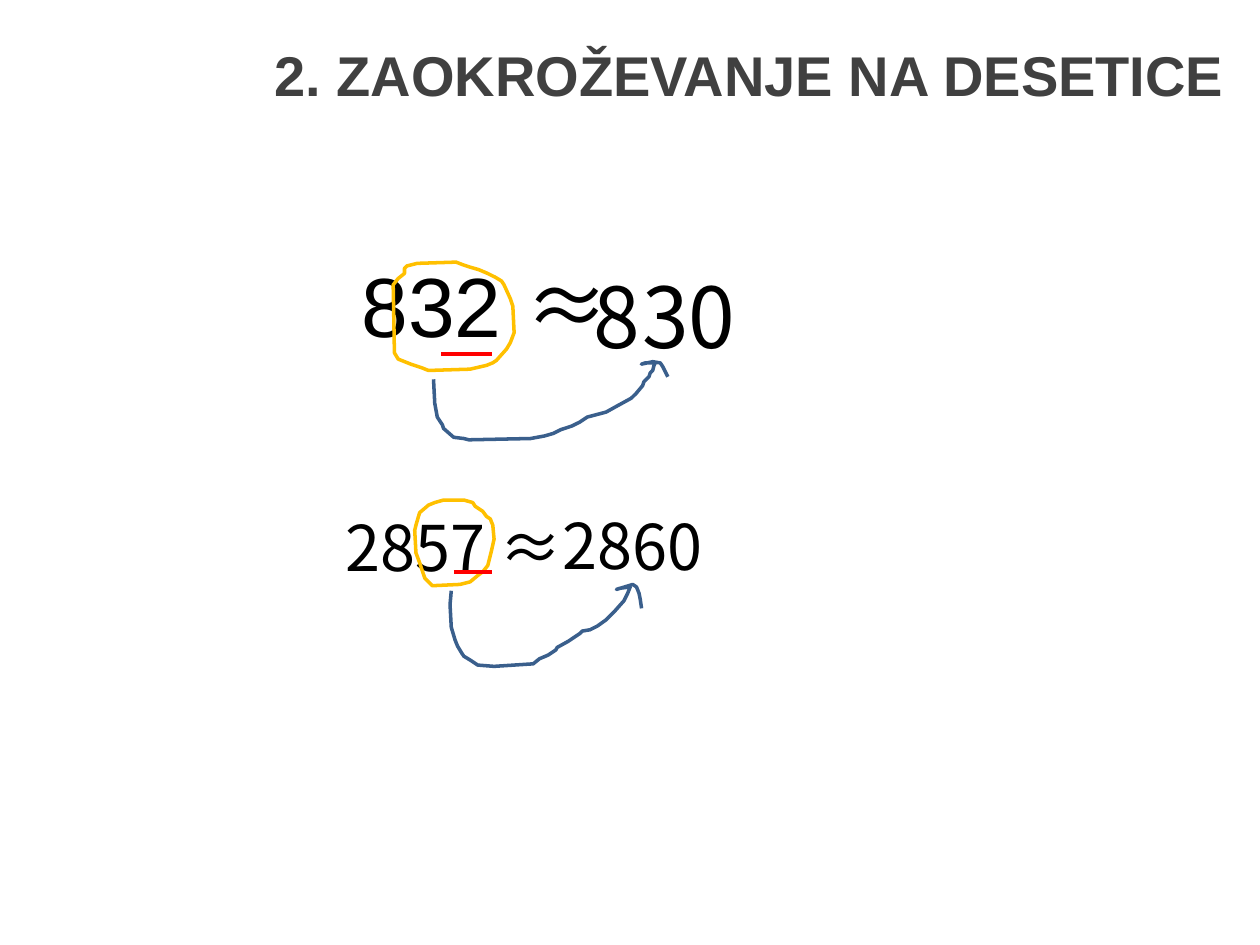
import pptx
import pptx.dml.color
import pptx.enum.shapes
import pptx.enum.text
import pptx.oxml.ns
import pptx.util
from lxml import etree

Cm, Pt = pptx.util.Cm, pptx.util.Pt
RGB = pptx.dml.color.RGBColor

GREY = RGB(0x40, 0x40, 0x40)
BLACK = RGB(0, 0, 0)
AMBER = RGB(0xFF, 0xC0, 0x00)
RED = RGB(0xFF, 0, 0)
BLUE = RGB(0x3A, 0x5F, 0x8C)
LATIN, SYMBOL = "Arial", "Noto Sans CJK KR"
STROKE_UNIT = Cm(2.54) / 100  # pen strokes are in hundredths of an inch

# Pen strokes, relative to the corner of their example
LOOP_832 = [
    (77, 21), (72, 25), (68, 30), (69, 84), (72, 89), (82, 93), (91, 96),
    (96, 98), (129, 97), (142, 94), (147, 92), (150, 90), (158, 81), (161, 76),
    (164, 68), (163, 47), (161, 41), (156, 30), (154, 27), (149, 24), (143, 21),
    (136, 18), (129, 16), (123, 14), (118, 12), (87, 13), (79, 15), (77, 17),
]
ARROW_832 = [
    (100, 105), (101, 124), (103, 135), (107, 141), (108, 144), (116, 151),
    (124, 152), (128, 153), (177, 152), (188, 150), (195, 148), (201, 145),
    (210, 142), (216, 139), (222, 135), (237, 131), (246, 126), (257, 120),
    (261, 116), (266, 110), (267, 107), (271, 103), (272, 100), (274, 98),
    (275, 94), (276, 92), (268, 92), (265, 93), (274, 91), (280, 92),
    (282, 95), (285, 101), (286, 103),
]
LOOP_2857 = [
    (68, 13), (66, 20), (65, 24), (66, 42), (69, 50), (70, 53), (73, 62),
    (79, 68), (101, 67), (109, 65), (115, 60), (119, 57), (123, 52), (126, 40),
    (128, 31), (127, 20), (125, 15), (122, 13), (119, 9), (113, 5), (111, 2),
    (104, 0), (88, 0), (81, 2), (76, 4), (69, 10),
]
ARROW_2857 = [
    (94, 72), (93, 83), (94, 101), (97, 111), (99, 116), (102, 121), (104, 124),
    (109, 127), (115, 131), (128, 132), (159, 130), (164, 126), (171, 123),
    (177, 119), (178, 117), (187, 112), (196, 106), (198, 104), (204, 103),
    (210, 100), (217, 95), (223, 89), (231, 80), (234, 74), (236, 69),
    (228, 70), (225, 71), (238, 67), (241, 69), (243, 74), (244, 79), (245, 86),
]


def add_title(slide, left, top, width, height):
    s = slide.shapes.title
    s.left, s.top, s.width, s.height = left, top, width, height
    tf = s.text_frame
    tf.text = " 2. ZAOKROŽEVANJE NA DESETICE"
    tf.vertical_anchor = pptx.enum.text.MSO_ANCHOR.MIDDLE
    p = tf.paragraphs[0]
    p.alignment = pptx.enum.text.PP_ALIGN.CENTER
    p.font.name, p.font.size, p.font.bold = LATIN, Pt(32), True
    p.font.color.rgb = GREY


def add_number(slide, left, top, width, height, size, text, wrap=True):
    s = slide.shapes.add_textbox(left, top, width, height)
    tf = s.text_frame
    tf.word_wrap = wrap
    p = tf.paragraphs[0]
    p.font.name, p.font.size = SYMBOL, Pt(size)
    p.font.color.rgb = BLACK
    r = p.add_run()
    r.text = text
    r.font.name, r.font.size = SYMBOL, Pt(size)
    r.font.color.rgb = BLACK
    return tf


def add_stroke(slide, left, top, points, color, close=False):
    fb = slide.shapes.build_freeform(*points[0], scale=STROKE_UNIT)
    fb.add_line_segments(points[1:], close=close)
    s = fb.convert_to_shape(left, top)
    s.shadow.inherit = False
    s.fill.background()
    s.line.color.rgb = color
    s.line.width = Pt(2)


def add_underline(slide, left, top, width, weight):
    s = slide.shapes.add_connector(
        pptx.enum.shapes.MSO_CONNECTOR.STRAIGHT, left, top, left + width, top)
    s.line.color.rgb = RED
    s.line.width = Pt(weight)
    etree.SubElement(s._element.spPr, pptx.oxml.ns.qn("a:effectLst"))


def add_example_832(slide, left, top, width, height):
    tf = add_number(slide, left, top, width, height, 48, "832 ")
    tf.margin_left = Cm(1.09)
    p = tf.paragraphs[0]
    p.runs[0].font.name = LATIN
    r = p.add_run()
    r.text = "≈"
    r.font.name, r.font.size = SYMBOL, Pt(48)
    r.font.color.rgb = BLACK
    add_stroke(slide, left, top, LOOP_832, AMBER, close=True)
    add_underline(slide, left + Cm(2.69), top + Cm(2.16), Cm(1.02), 2.25)
    add_stroke(slide, left, top, ARROW_832, BLUE)
    y = top + Cm(0.23)
    add_number(slide, left + Cm(5.51), y, Cm(3.99), Cm(2.31), 48, "8")
    add_number(slide, left + Cm(6.5), y, Cm(2.41), Cm(2.31), 48, "30", wrap=False)


def add_example_2857(slide, left, top, height):
    add_number(slide, left, top + Cm(0.05), Cm(5), height, 36, "2857 ≈")
    add_stroke(slide, left, top, LOOP_2857, AMBER, close=True)
    add_underline(slide, left + Cm(2.44), top + Cm(1.45), Cm(0.76), 2)
    add_stroke(slide, left, top, ARROW_2857, BLUE)
    add_number(slide, left + Cm(4.39), top, Cm(5.59), height, 36, "28")
    add_number(slide, left + Cm(5.79), top + Cm(0.03), Cm(2.79), height, 36, "60")


def main():
    prs = pptx.Presentation()
    prs.slide_width, prs.slide_height = Cm(25.4), Cm(19.05)
    slide = prs.slides.add_slide(prs.slide_layouts[5])
    add_title(slide, Cm(4.5), Cm(0), Cm(20.9), Cm(2.97))
    add_example_832(slide, Cm(6.2), Cm(4.98), Cm(18.24), Cm(11.53))
    add_example_2857(slide, Cm(6.71), Cm(10.08), Cm(1.8))
    prs.save("out.pptx")


if __name__ == "__main__":
    main()
